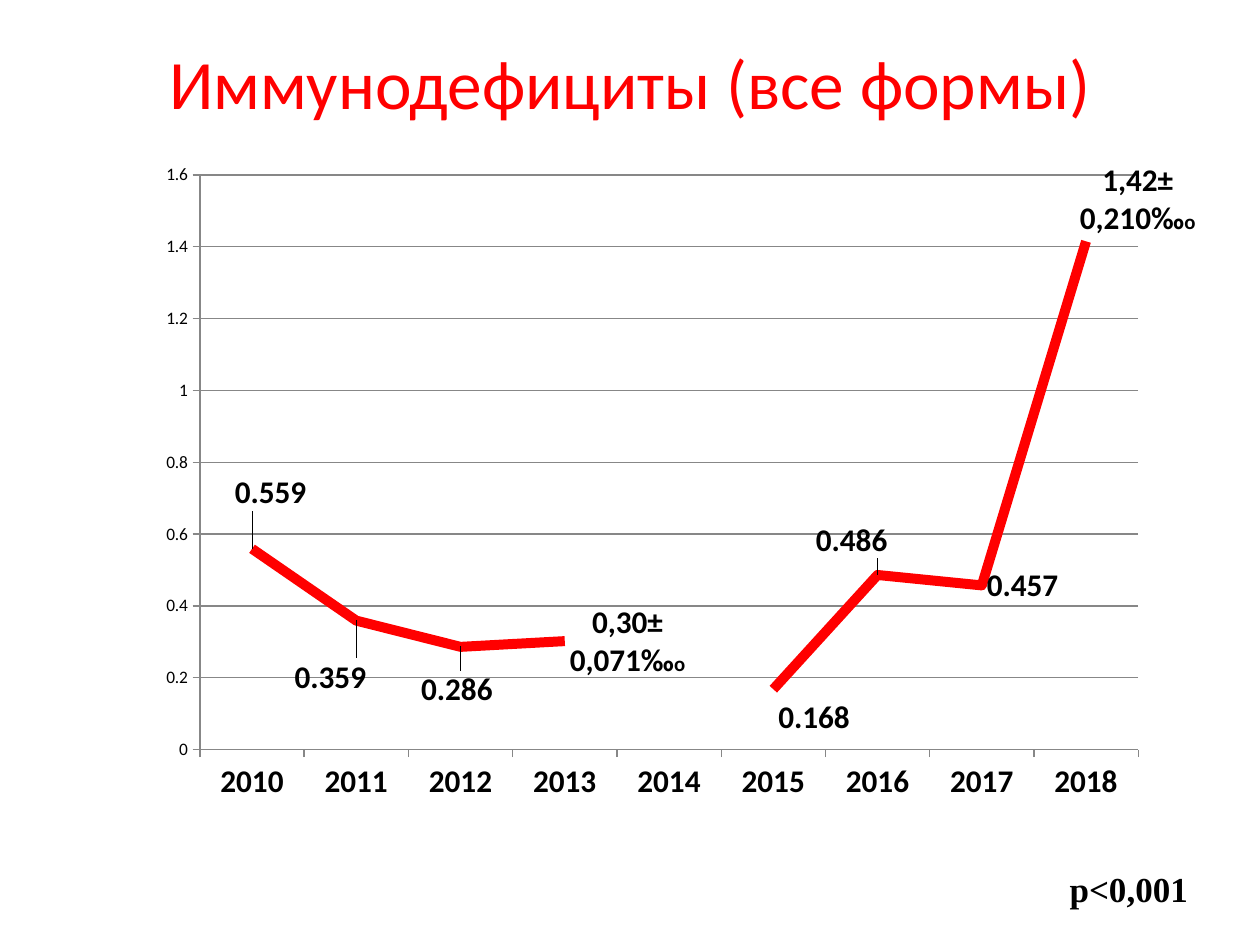
from lxml import etree
from pptx import Presentation
from pptx.chart.data import CategoryChartData
from pptx.dml.color import RGBColor
from pptx.enum.chart import XL_CHART_TYPE as ChartType
from pptx.enum.chart import XL_LABEL_POSITION as LabelPos
from pptx.enum.chart import XL_MARKER_STYLE as Marker
from pptx.enum.chart import XL_TICK_MARK as Tick
from pptx.enum.text import MSO_ANCHOR as Anchor
from pptx.enum.text import PP_ALIGN as Align
from pptx.oxml.ns import qn
from pptx.util import Inches, Pt

RED = RGBColor(0xFF, 0x00, 0x00)
BLACK = RGBColor(0x00, 0x00, 0x00)
GREY = RGBColor(0x87, 0x87, 0x87)

YEARS = [str(year) for year in range(2010, 2019)]
RATES = [0.559, 0.359, 0.286, 0.302, None, 0.168, 0.486, 0.457, 1.415]
# Label shift from its place right of the point, as shares of the chart size
LABEL_SHIFTS = {0: (-0.02, -0.08), 1: (-0.06, 0.08), 2: (-0.04, 0.06), 3: (0, 0),
                5: (0, 0.04), 6: (-0.06, -0.05), 8: (-0.01, -0.06)}
# Mean and error, written in place of the plain value
ERROR_LABELS = {3: ("0,30±", "0,071‰"), 8: ("1,42±", "0,210‰")}


def style(font, size, color=BLACK, bold=False, name="Calibri"):
    font.size, font.bold, font.name = Pt(size), bold, name
    font.color.rgb = color


def add_text(slide, box, text, size, color, name, bold=False, align=Align.LEFT, wrap=True):
    frame = slide.shapes.add_textbox(*map(Inches, box)).text_frame
    frame.word_wrap = wrap
    frame.vertical_anchor = Anchor.MIDDLE
    frame.text = text
    frame.paragraphs[0].alignment = align
    style(frame.paragraphs[0].runs[0].font, size, color, bold, name)


def set_layout(parent, index, **settings):
    """Put a manual layout into a chart element at the given child index."""
    for old in parent.findall(qn("c:layout")):
        parent.remove(old)
    layout = etree.Element(qn("c:layout"))
    manual = etree.SubElement(layout, qn("c:manualLayout"))
    for tag, value in settings.items():
        etree.SubElement(manual, qn(f"c:{tag}")).set("val", str(value))
    parent.insert(index, layout)


def label_points(series):
    labels = series.data_labels
    labels.show_value = True
    labels.position = LabelPos.RIGHT
    style(labels.font, 18, bold=True)
    for index, (dx, dy) in LABEL_SHIFTS.items():
        label = series.points[index].data_label
        if index in ERROR_LABELS:
            mean, error = ERROR_LABELS[index]
            frame = label.text_frame
            frame.text = f"{mean}\n{error}"
            frame.paragraphs[1].add_run().text = "о"
            for paragraph in frame.paragraphs:
                for run in paragraph.runs:
                    style(run.font, 18, bold=True)
            frame.paragraphs[1].runs[1].font.size = Pt(12)
        else:
            style(label.font, 18, bold=True)
        label.position = LabelPos.RIGHT
    for element in series._element.iter(qn("c:dLbl")):
        dx, dy = LABEL_SHIFTS[int(element.find(qn("c:idx")).get("val"))]
        set_layout(element, 1, x=dx, y=dy)


def add_rate_chart(slide, box):
    data = CategoryChartData()
    data.categories = YEARS
    data.add_series("Series 1", RATES)
    chart = slide.shapes.add_chart(ChartType.LINE, *map(Inches, box), data).chart
    chart.has_legend = chart.has_title = False
    style(chart.font, 10)
    set_layout(chart._chartSpace.chart.plotArea, 0, layoutTarget="inner",
               xMode="edge", yMode="edge", x=0.113, y=0.057, w=0.844, h=0.816)

    # Axes
    years, rates = chart.category_axis, chart.value_axis
    style(years.tick_labels.font, 18, bold=True)
    style(rates.tick_labels.font, 10)
    rates.minimum_scale, rates.maximum_scale, rates.major_unit = 0, 1.6, 0.2
    rates.has_major_gridlines = True
    for axis in (years, rates):
        axis.major_tick_mark = Tick.OUTSIDE
    for line in (years.format.line, rates.format.line, rates.major_gridlines.format.line):
        line.color.rgb = GREY
        line.width = Pt(0.75)

    # Rate line
    series = chart.plots[0].series[0]
    series.smooth = False
    series.marker.style = Marker.NONE
    series.format.line.color.rgb = RED
    series.format.line.width = Pt(5.75)
    label_points(series)


def build_slide(prs):
    slide = prs.slides.add_slide(prs.slide_layouts[6])
    # Title
    add_text(slide, (0.5, 0.3, 9, 0.69), "Иммунодефициты (все формы)", 39.6, RED,
             "Calibri", align=Align.CENTER)
    # Rates by year
    add_rate_chart(slide, (0.59, 1.07, 8.9, 5.59))
    # Significance
    add_text(slide, (8.39, 6.83, 1.15, 0.44), "р<0,001", 20, BLACK,
             "Times New Roman", bold=True, wrap=False)


def main():
    prs = Presentation()
    prs.slide_width, prs.slide_height = Inches(10), Inches(7.5)
    build_slide(prs)
    prs.save("out.pptx")


if __name__ == "__main__":
    main()
